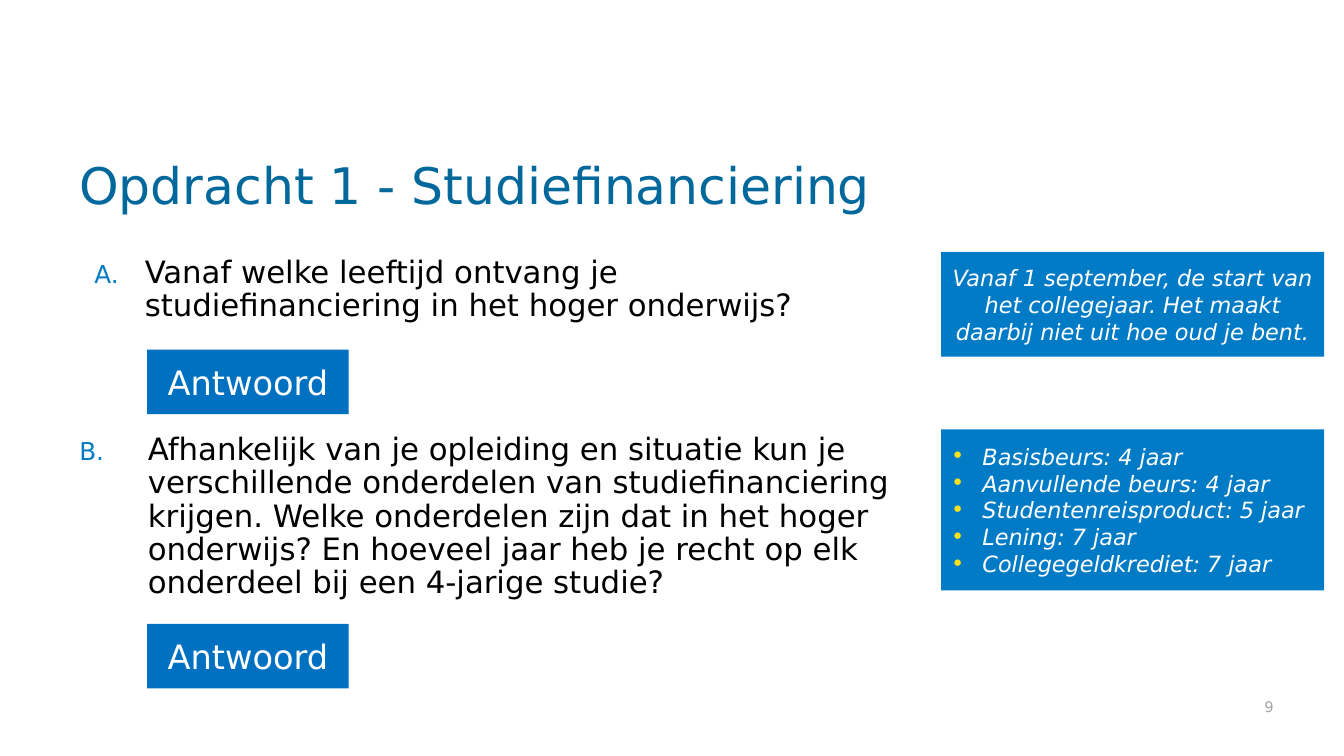
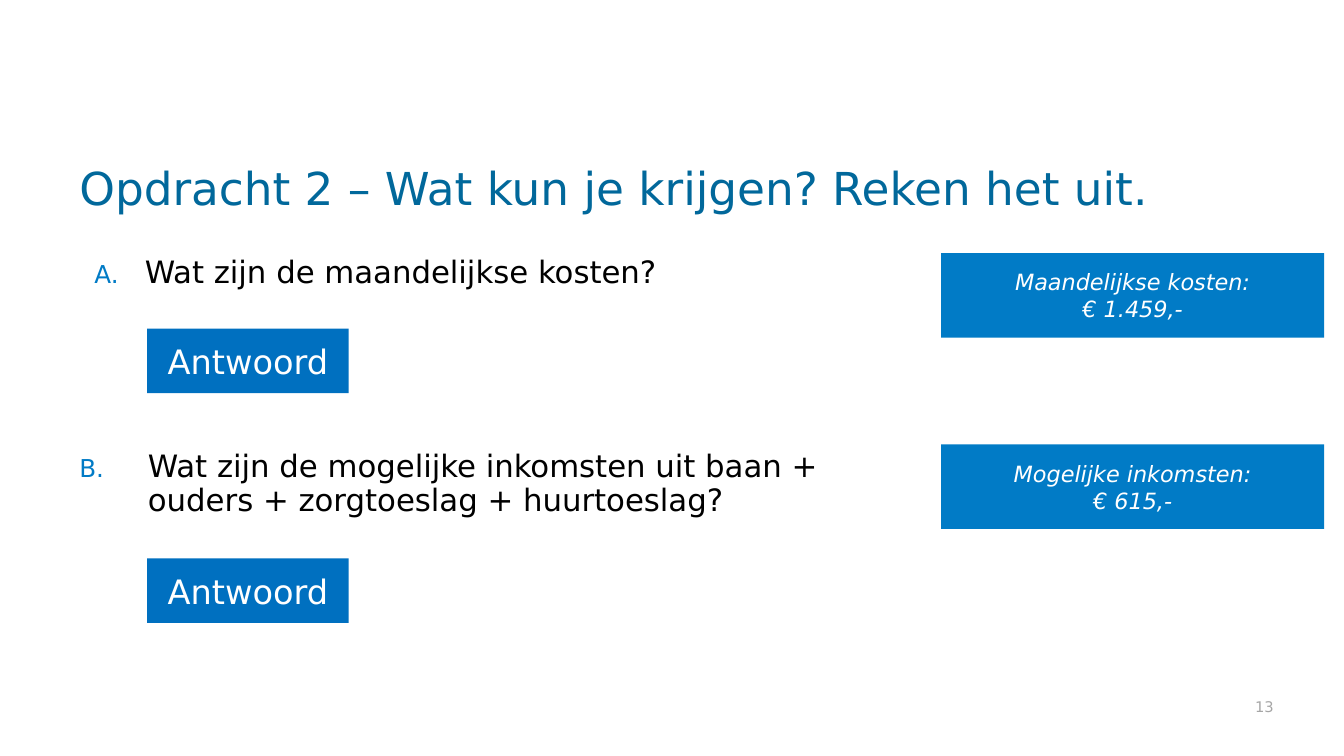
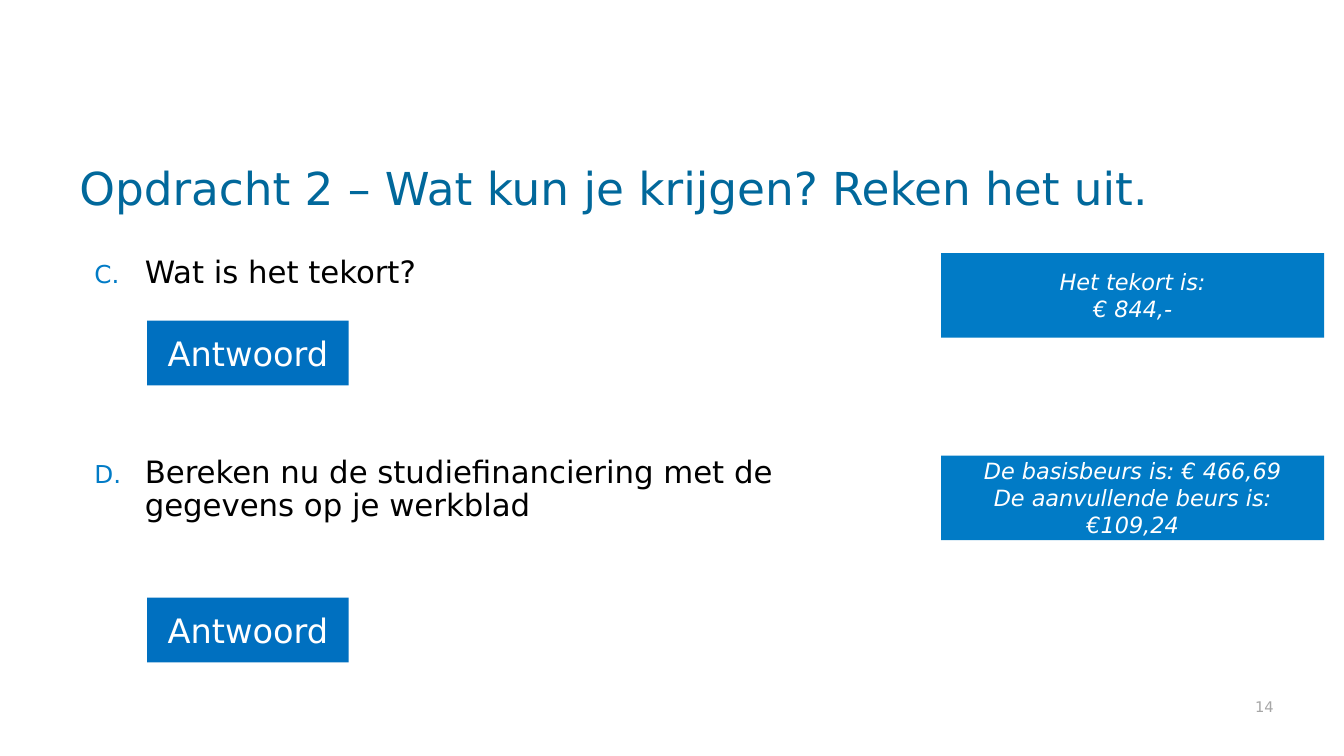
from dataclasses import dataclass

from lxml import etree
from pptx import Presentation
from pptx.dml.color import RGBColor
from pptx.enum.shapes import MSO_SHAPE
from pptx.enum.text import MSO_ANCHOR, PP_ALIGN
from pptx.oxml.ns import qn
from pptx.shapes.autoshape import Shape
from pptx.slide import Slide
from pptx.util import Cm, Pt

RECTANGLE = MSO_SHAPE.RECTANGLE
TOP, MIDDLE, BOTTOM = MSO_ANCHOR.TOP, MSO_ANCHOR.MIDDLE, MSO_ANCHOR.BOTTOM
LEFT, CENTER, RIGHT = PP_ALIGN.LEFT, PP_ALIGN.CENTER, PP_ALIGN.RIGHT

FONT = "DejaVu Sans"
COLORS = {
    "title": "01689B",
    "text": "000000",
    "number": "A6A6A6",
    "button": "0070C0",
    "answer": "017BC6",
    "bullet": "F9E11E",
    "white": "FFFFFF",
}


@dataclass(frozen=True)
class Box:
    left: float
    top: float
    width: float
    height: float


@dataclass(frozen=True)
class TextStyle:
    size: float
    color: str
    align: PP_ALIGN = LEFT
    anchor: MSO_ANCHOR = TOP
    italic: bool = False
    line_spacing: float = 1.0


@dataclass(frozen=True)
class Question:
    letter: str
    text: str
    button_top: float
    answer: tuple[str, ...]
    answer_top: float
    answer_height: float = 2.13
    gap_before: float = 0
    margin: float = 1.65
    hanging: float = 1.27
    bulleted: bool = False


@dataclass(frozen=True)
class Assignment:
    title: str
    title_size: float
    number: int
    questions: tuple[Question, ...]


TITLE_BOX = Box(1.75, 2.92, 30.35, 2.64)
QUESTIONS_BOX = Box(1.75, 6.35, 21.23, 10.92)
NUMBER_BOX = Box(18.21, 17.27, 13.89, 0.89)
BUTTON_LEFT, BUTTON_WIDTH, BUTTON_HEIGHT = 3.71, 5.08, 1.63
ANSWER_LEFT, ANSWER_WIDTH = 23.72, 9.65

QUESTION_STYLE = TextStyle(22, "text", line_spacing=0.9)
NUMBER_STYLE = TextStyle(10.5, "number", RIGHT, BOTTOM)
BUTTON_STYLE = TextStyle(24, "white", CENTER, MIDDLE)
ANSWER_STYLE = TextStyle(16, "white", CENTER, MIDDLE, italic=True)
BULLET_STYLE = TextStyle(16, "white", LEFT, MIDDLE, italic=True)

CALCULATION_TITLE = "Opdracht 2 – Wat kun je krijgen? Reken het uit."

ASSIGNMENTS = (
    Assignment("Opdracht 1 - Studiefinanciering", 36, 9, (
        Question(
            "A", "Vanaf welke leeftijd ontvang je studiefinanciering in het hoger onderwijs?",
            8.81,
            ("Vanaf 1 september, de start van het collegejaar. "
             "Het maakt daarbij niet uit hoe oud je bent.",),
            6.35, 2.64),
        Question(
            "B", "Afhankelijk van je opleiding en situatie kun je verschillende onderdelen "
            "van studiefinanciering krijgen. Welke onderdelen zijn dat in het hoger onderwijs? "
            "En hoeveel jaar heb je recht op elk onderdeel bij een 4-jarige studie?",
            15.72,
            ("Basisbeurs: 4 jaar", "Aanvullende beurs: 4 jaar", "Studentenreisproduct: 5 jaar",
             "Lening: 7 jaar", "Collegegeldkrediet: 7 jaar"),
            10.82, 4.06, gap_before=79, margin=1.73, hanging=1.73, bulleted=True),
    )),
    Assignment(CALCULATION_TITLE, 32.4, 13, (
        Question("A", "Wat zijn de maandelijkse kosten?", 8.28,
                 ("Maandelijkse kosten:", "€ 1.459,-"), 6.38),
        Question("B", "Wat zijn de mogelijke inkomsten uit baan + ouders + zorgtoeslag + "
                 "huurtoeslag?", 14.07,
                 ("Mogelijke inkomsten:", "€ 615,-"), 11.2,
                 gap_before=115, margin=1.73, hanging=1.73),
    )),
    Assignment(CALCULATION_TITLE, 32.4, 14, (
        Question("C", "Wat is het tekort?", 8.08, ("Het tekort is:", "€ 844,-"), 6.38),
        Question("D", "Bereken nu de studiefinanciering met de gegevens op je werkblad", 15.06,
                 ("De basisbeurs is: € 466,69", "De aanvullende beurs is: €109,24"), 11.48,
                 gap_before=119),
    )),
)


def place(box: Box) -> tuple[Cm, Cm, Cm, Cm]:
    return Cm(box.left), Cm(box.top), Cm(box.width), Cm(box.height)


def write(shape: Shape, lines: tuple[str, ...], style: TextStyle) -> None:
    frame = shape.text_frame
    frame.word_wrap = True
    frame.vertical_anchor = style.anchor
    frame.text = "\n".join(lines)
    for paragraph in frame.paragraphs:
        paragraph.alignment = style.align
        paragraph.line_spacing = style.line_spacing
        for run in paragraph.runs:
            run.font.name = FONT
            run.font.size = Pt(style.size)
            run.font.italic = style.italic
            run.font.color.rgb = RGBColor.from_string(COLORS[style.color])


def add_text(slide: Slide, box: Box, lines: tuple[str, ...], style: TextStyle) -> Shape:
    shape = slide.shapes.add_textbox(*place(box))
    write(shape, lines, style)
    return shape


def add_panel(slide: Slide, box: Box, fill: str, lines: tuple[str, ...],
              style: TextStyle) -> Shape:
    panel = slide.shapes.add_shape(RECTANGLE, *place(box))
    panel.shadow.inherit = False
    panel.fill.solid()
    panel.fill.fore_color.rgb = RGBColor.from_string(COLORS[fill])
    panel.line.fill.background()
    write(panel, lines, style)
    return panel


def add_marker(paragraph, margin: float, hanging: float, color: str, percent: int,
               tag: str, **attributes: str) -> None:
    properties = paragraph._p.get_or_add_pPr()
    properties.set("marL", str(Cm(margin)))
    properties.set("indent", str(-Cm(hanging)))
    marker_color = etree.SubElement(properties, qn("a:buClr"))
    etree.SubElement(marker_color, qn("a:srgbClr"), val=COLORS[color])
    etree.SubElement(properties, qn("a:buSzPct"), val=str(percent * 1000))
    etree.SubElement(properties, qn("a:buFont"), typeface=FONT)
    etree.SubElement(properties, qn(tag), **attributes)


def add_questions(slide: Slide, questions: tuple[Question, ...]) -> None:
    texts = tuple(question.text for question in questions)
    body = add_text(slide, QUESTIONS_BOX, texts, QUESTION_STYLE)
    for paragraph, question in zip(body.text_frame.paragraphs, questions):
        start = ord(question.letter) - ord("A") + 1
        add_marker(paragraph, question.margin, question.hanging, "answer", 80,
                   "a:buAutoNum", type="alphaUcPeriod", startAt=str(start))
        if question.gap_before:
            paragraph.space_before = Pt(question.gap_before)


def add_answer(slide: Slide, question: Question) -> None:
    button = Box(BUTTON_LEFT, question.button_top, BUTTON_WIDTH, BUTTON_HEIGHT)
    add_panel(slide, button, "button", ("Antwoord",), BUTTON_STYLE)
    box = Box(ANSWER_LEFT, question.answer_top, ANSWER_WIDTH, question.answer_height)
    style = BULLET_STYLE if question.bulleted else ANSWER_STYLE
    answer = add_panel(slide, box, "answer", question.answer, style)
    if question.bulleted:
        for paragraph in answer.text_frame.paragraphs:
            add_marker(paragraph, 0.79, 0.79, "bullet", 100, "a:buChar", char="•")


def add_assignment(slide: Slide, assignment: Assignment) -> None:
    title_style = TextStyle(assignment.title_size, "title", anchor=BOTTOM, line_spacing=0.9)
    add_questions(slide, assignment.questions)
    add_text(slide, TITLE_BOX, (assignment.title,), title_style)
    number = add_text(slide, NUMBER_BOX, (str(assignment.number),), NUMBER_STYLE)
    number.text_frame.margin_right = Cm(0)
    for question in assignment.questions:
        add_answer(slide, question)


def main() -> None:
    deck = Presentation()
    deck.slide_width, deck.slide_height = Cm(33.87), Cm(19.05)
    blank = deck.slide_layouts[6]
    for assignment in ASSIGNMENTS:
        add_assignment(deck.slides.add_slide(blank), assignment)
    deck.save("out.pptx")


if __name__ == "__main__":
    main()
